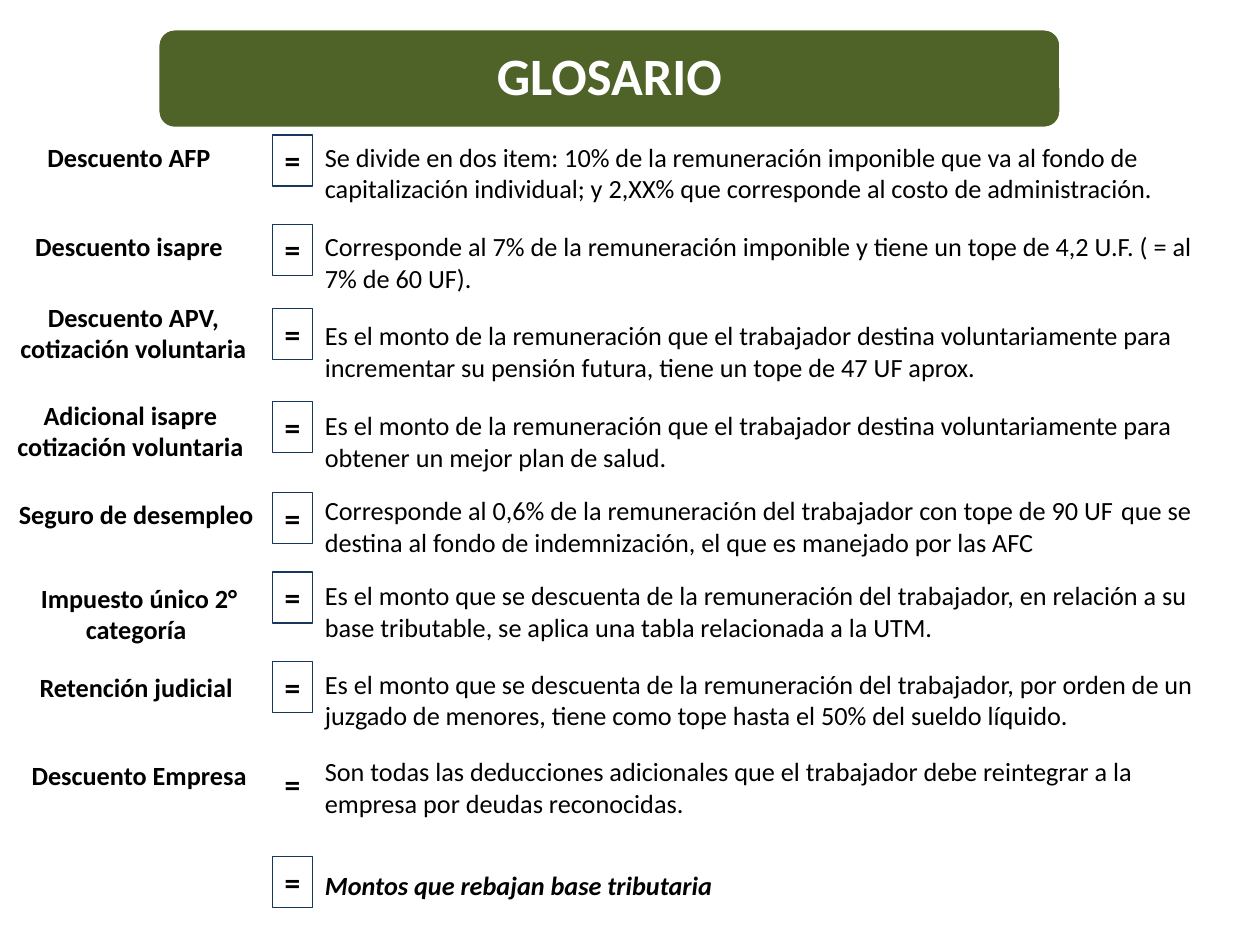
from dataclasses import dataclass

import pptx
import pptx.dml.color
import pptx.enum.shapes
import pptx.enum.text
import pptx.util

Cm = pptx.util.Cm
Pt = pptx.util.Pt
Align = pptx.enum.text.PP_ALIGN
Shape = pptx.enum.shapes.MSO_SHAPE

FONT = "Calibri"
BLACK, WHITE, GREEN, NAVY = "000000", "FFFFFF", "4F6228", "17375E"
SIGN_LEFT, SIGN_WIDTH, SIGN_HEIGHT = 5.49, 0.81, 1.03
DEFINITION_LEFT = 6.3
LINE_HEIGHT, TWO_LINES = 0.89, 1.53


@dataclass
class Term:
    text: str
    left: float
    top: float
    width: float


@dataclass
class Entry:
    term: Term | None
    sign_top: float
    definition: tuple[str, ...]  # parts are joined by a larger space
    top: float
    width: float
    boxed: bool = True
    emphasis: bool = False


ENTRIES = [
    Entry(Term("Descuento AFP", 0.1, 2.72, 5), 2.72,
          ("Se divide en dos item: 10% de la remuneración imponible que va al fondo de "
           "capitalización individual; y 2,XX% que corresponde al costo de administración.",),
          2.72, 19.1),
    Entry(Term("Descuento isapre", 0.1, 4.52, 5), 4.52,
          ("Corresponde al 7% de la remuneración imponible y tiene un tope de 4,2 U.F. "
           "( = al 7% de 60 UF).",),
          4.52, 18.19),
    Entry(Term("Descuento APV, cotización voluntaria", 0, 5.94, 5.38), 6.22,
          ("Es el monto de la remuneración que el trabajador destina voluntariamente para "
           "incrementar su pensión futura, tiene un tope de 47 UF aprox.",),
          6.32, 18.39),
    Entry(Term("Adicional isapre cotización voluntaria", 0, 7.92, 5.26), 8.1,
          ("Es el monto de la remuneración que el trabajador destina voluntariamente para "
           "obtener un mejor plan de salud.",),
          8.13, 18.21),
    Entry(Term("Seguro de desempleo ", 0.1, 9.93, 5.41), 9.93,
          ("Corresponde al 0,6% de la remuneración del trabajador con tope de 90 UF",
           "que se destina al fondo de indemnización, el que es manejado por las AFC"),
          9.73, 18.9),
    Entry(Term("Impuesto único 2° categoría ", 0.1, 11.61, 5.41), 11.53,
          ("Es el monto que se descuenta de la remuneración del trabajador, en relación a su "
           "base tributable, se aplica una tabla relacionada a la UTM.",),
          11.56, 18.9),
    Entry(Term("Retención judicial ", 0.1, 13.41, 5.41), 13.34,
          ("Es el monto que se descuenta de la remuneración del trabajador, por orden de un "
           "juzgado de menores, tiene como tope hasta el 50% del sueldo líquido.",),
          13.34, 18.59),
    Entry(Term("Descuento Empresa", 0.1, 15.19, 5.41), 15.29,
          ("Son todas las deducciones adicionales que el trabajador debe reintegrar a la "
           "empresa por deudas reconocidas.",),
          15.11, 18.59, boxed=False),
    Entry(None, 17.27, ("Montos que rebajan base tributaria",), 17.4, 18.59, emphasis=True),
]


def color(value: str) -> pptx.dml.color.RGBColor:
    return pptx.dml.color.RGBColor.from_string(value)


def style(paragraph, size: float, bold: bool = False, italic: bool = False,
          align=Align.LEFT, ink: str = BLACK) -> None:
    paragraph.alignment = align
    font = paragraph.font
    font.name, font.size, font.bold, font.italic = FONT, Pt(size), bold, italic
    font.color.rgb = color(ink)


def prepare(shape):
    """Set the frame to wrap and grow, and return its first paragraph."""
    frame = shape.text_frame
    frame.word_wrap = True
    frame.auto_size = pptx.enum.text.MSO_AUTO_SIZE.SHAPE_TO_FIT_TEXT
    frame.vertical_anchor = pptx.enum.text.MSO_ANCHOR.TOP
    return frame.paragraphs[0]


def add_text(slide, left: float, top: float, width: float, height: float):
    return prepare(slide.shapes.add_textbox(Cm(left), Cm(top), Cm(width), Cm(height)))


def add_sign(slide, top: float, boxed: bool) -> None:
    if boxed:
        box = slide.shapes.add_shape(Shape.RECTANGLE, Cm(SIGN_LEFT), Cm(top),
                                     Cm(SIGN_WIDTH), Cm(SIGN_HEIGHT))
        box.shadow.inherit = False
        box.fill.background()
        box.line.color.rgb = color(NAVY)
        box.line.width = Pt(0.75)
        sign = prepare(box)
    else:
        sign = add_text(slide, SIGN_LEFT, top, SIGN_WIDTH, SIGN_HEIGHT)
    sign.text = "="
    style(sign, 18, bold=True)


def add_entry(slide, entry: Entry) -> None:
    if entry.term:
        term = add_text(slide, entry.term.left, entry.term.top, entry.term.width, LINE_HEIGHT)
        term.text = entry.term.text
        style(term, 15, bold=True, align=Align.CENTER)

    add_sign(slide, entry.sign_top, entry.boxed)

    height = LINE_HEIGHT if entry.emphasis else TWO_LINES
    definition = add_text(slide, DEFINITION_LEFT, entry.top, entry.width, height)
    style(definition, 15, bold=entry.emphasis, italic=entry.emphasis)
    for index, part in enumerate(entry.definition):
        if index:
            space = definition.add_run()
            space.text = " "
            space.font.size = Pt(18)
        definition.add_run().text = part


def add_title(slide) -> None:
    banner = slide.shapes.add_shape(Shape.ROUNDED_RECTANGLE, Cm(3.18), Cm(0.58),
                                    Cm(18.21), Cm(2.01))
    banner.shadow.inherit = False
    banner.fill.solid()
    banner.fill.fore_color.rgb = color(GREEN)
    banner.line.color.rgb = color(WHITE)
    banner.line.width = Pt(2)

    title = slide.shapes.title
    title._element.addprevious(banner._element)  # banner goes behind the title
    title.left, title.top, title.width, title.height = Cm(3.28), Cm(0.69), Cm(18.01), Cm(1.8)
    frame = title.text_frame
    frame.text = "GLOSARIO"
    frame.vertical_anchor = pptx.enum.text.MSO_ANCHOR.MIDDLE
    frame.margin_left = frame.margin_right = Cm(0.3)
    frame.margin_top = frame.margin_bottom = Cm(0.3)
    heading = frame.paragraphs[0]
    heading.line_spacing = 0.9
    style(heading, 30, bold=True, align=Align.CENTER, ink=WHITE)


def main() -> None:
    deck = pptx.Presentation()
    deck.slide_width, deck.slide_height = Cm(25.4), Cm(19.05)
    slide = deck.slides.add_slide(deck.slide_layouts[5])  # title only

    add_title(slide)
    for entry in ENTRIES:
        add_entry(slide, entry)

    deck.save("out.pptx")


if __name__ == "__main__":
    main()
